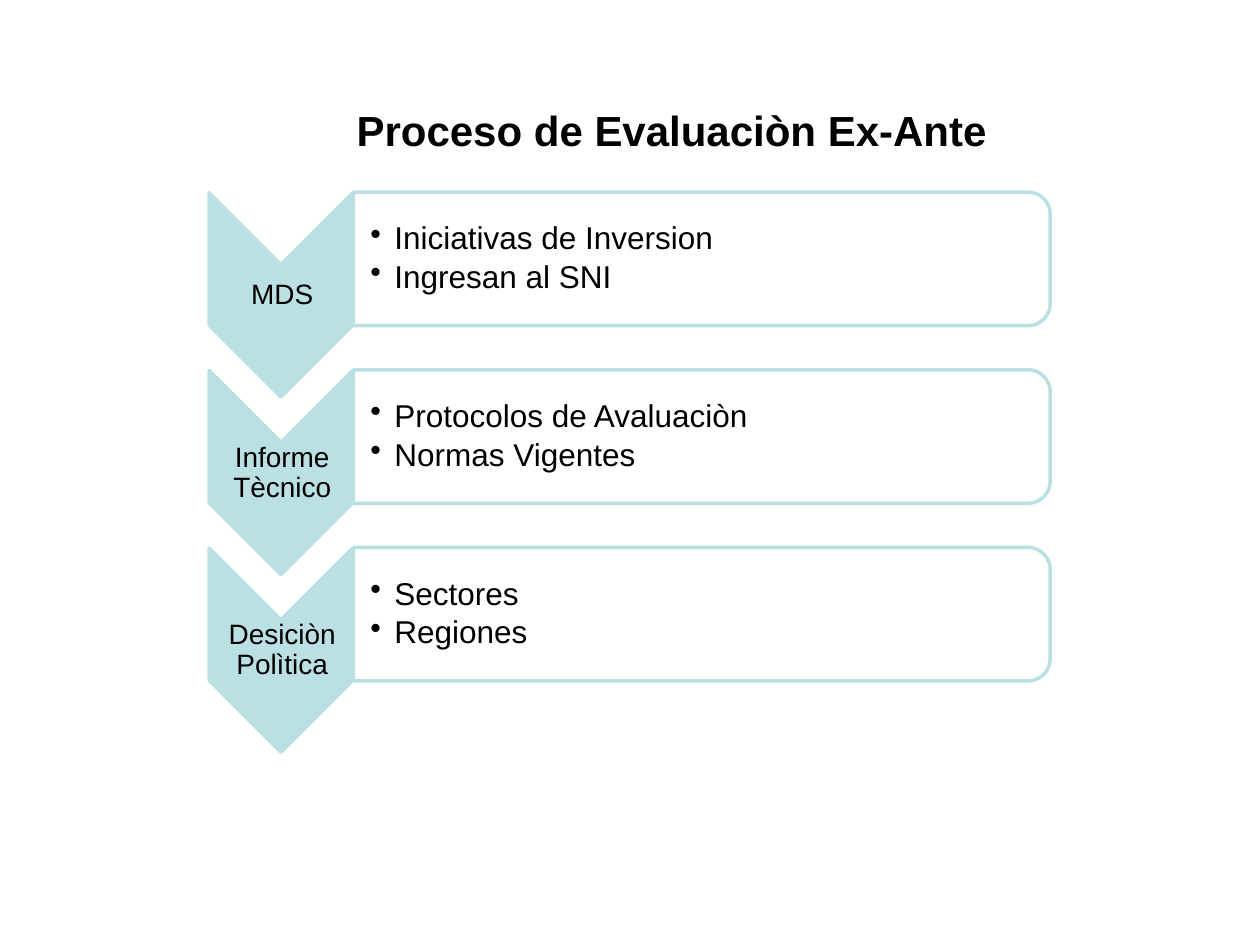
from lxml import etree
from pptx import Presentation
from pptx.dml.color import RGBColor
from pptx.enum import shapes as kinds, text as txt
from pptx.oxml.ns import qn
from pptx.util import Inches, Pt

HUES = {"aqua": "BBE0E3", "white": "FFFFFF", "black": "000000"}
STEPS = [
    ("MDS", ["Iniciativas de Inversion", "Ingresan al SNI"]),
    ("Informe Tècnico", ["Protocolos de Avaluaciòn", "Normas Vigentes"]),
    ("Desiciòn Polìtica", ["Sectores", "Regiones"]),
]
TOP, PITCH = 1.53, 1.41


def add_turned(kind, box, fill, adjs):
    """Add a shape turned by 90 degrees; box is its place before turning."""
    shape = slide.shapes.add_shape(kind, *map(Inches, box))
    shape.rotation = 90
    shape.shadow.inherit = False
    for i, adj in enumerate(adjs):
        shape.adjustments[i] = adj
    shape.fill.solid()
    shape.fill.fore_color.rgb = RGBColor.from_string(HUES[fill])
    shape.line.color.rgb = RGBColor.from_string(HUES["aqua"])
    shape.line.width = Pt(2)
    return shape


def fill_text(shape, lines, size, align, insets, anchor, bold=False, space=None):
    """Write one paragraph per line and format the frame."""
    frame = shape.text_frame
    look = {"word_wrap": True, "auto_size": txt.MSO_AUTO_SIZE.NONE,
            "vertical_anchor": anchor}
    sides = ("margin_left", "margin_top", "margin_right", "margin_bottom")
    look.update(zip(sides, map(Inches, insets)))
    for name, value in look.items():
        setattr(frame, name, value)
    frame.text = "\n".join(lines)
    for para in frame.paragraphs:
        para.alignment = align
        para.line_spacing = space
        font = para.runs[0].font
        for name, value in {"name": "Arial", "size": Pt(size), "bold": bold}.items():
            setattr(font, name, value)
        font.color.rgb = RGBColor.from_string(HUES["black"])
    return frame.paragraphs


prs = Presentation()
prs.slide_width, prs.slide_height = Inches(10), Inches(7.5)
slide = prs.slides.add_slide(prs.slide_layouts[5])

title = slide.shapes.title
place = {"left": 2.73, "top": 0.78, "width": 5.25, "height": 0.5}
for name, value in place.items():
    setattr(title, name, Inches(value))
fill_text(title, ["Proceso de Evaluaciòn Ex-Ante"], 24, txt.PP_ALIGN.LEFT,
          (0.1, 0.05, 0.1, 0.05), txt.MSO_ANCHOR.TOP, bold=True)

mid = txt.MSO_ANCHOR.MIDDLE
for row, (step, items) in enumerate(STEPS):
    top = TOP + row * PITCH

    add_turned(kinds.MSO_SHAPE.CHEVRON, (1.42, top + 0.24, 1.62, 1.14), "aqua", [0.5])
    label = slide.shapes.add_textbox(
        *map(Inches, (1.67, top + 0.57, 1.14, 0.49)))
    fill_text(label, [step], 16, txt.PP_ALIGN.CENTER, [0.01] * 4, mid, space=0.9)

    panel = add_turned(kinds.MSO_SHAPE.ROUND_2_SAME_RECTANGLE,
                       (5.04, top - 2.24, 1.06, 5.53), "white", [0.167, 0])
    hue = panel.fill._xPr.find(qn("a:solidFill"))[0]
    etree.SubElement(hue, qn("a:alpha"), val="90000")

    notes = slide.shapes.add_textbox(*map(Inches, (2.8, top + 0.05, 5.48, 0.95)))
    paras = fill_text(notes, items, 18, txt.PP_ALIGN.LEFT,
                      (0.14, 0.01, 0.01, 0.01), mid, space=0.9)
    for i, para in enumerate(paras):
        para.level = 1
        para.space_before = Pt(2.7 if i else 0)
        props = para._p.get_or_add_pPr()
        props.set("marL", str(Inches(0.19)))
        props.set("indent", str(-Inches(0.19)))
        etree.SubElement(props, qn("a:buChar"), char="•")

prs.save("out.pptx")
